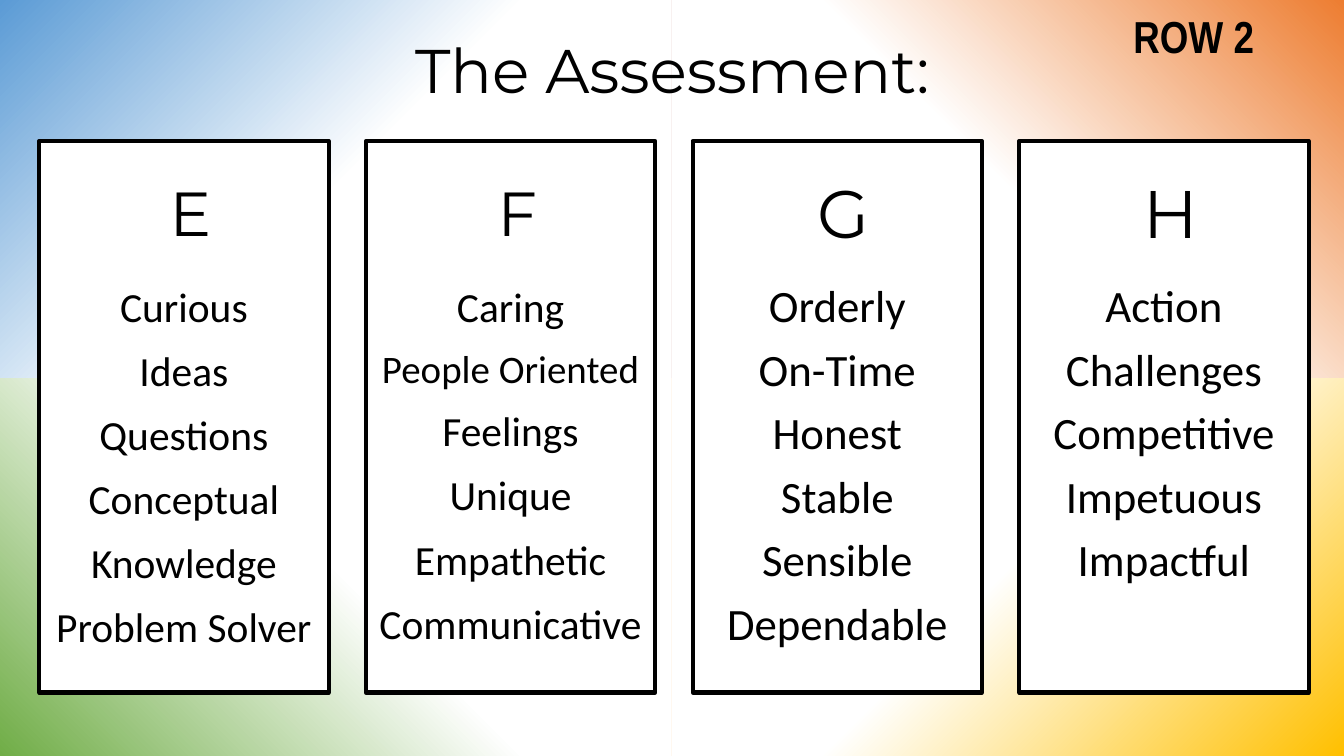
from pptx import Presentation
from pptx.dml.color import RGBColor
from pptx.enum.shapes import MSO_SHAPE
from pptx.enum.text import MSO_ANCHOR, PP_ALIGN
from pptx.util import Inches, Pt

RECTANGLE = MSO_SHAPE.RECTANGLE
TOP, MIDDLE = MSO_ANCHOR.TOP, MSO_ANCHOR.MIDDLE
CENTER = PP_ALIGN.CENTER

THEME = {
    "black": RGBColor.from_string("000000"),
    "white": RGBColor.from_string("FFFFFF"),
    "corners": ["5B9BD5", "ED7D31", "70AD47", "FFC000"],
    "heading": "Montserrat",
    "body": "Calibri",
    "label": "Arial Narrow",
    "title_size": 44,
    "label_size": 32,
}
# Two type scales for the cards: sizes, line spacings and top inset
COMPACT = {"letter": 44.4, "word": 29.6, "letter_gap": 0.9, "word_gap": 1.2, "inset": 0.41}
LARGE = {"letter": 48, "word": 32, "letter_gap": 0.8, "word_gap": 1.1, "inset": 0.45}
SMALLER_WORDS = {"People Oriented": 27.8}

CARDS = [
    ("E", COMPACT, ["Curious", "Ideas", "Questions", "Conceptual", "Knowledge", "Problem Solver"]),
    ("F", COMPACT, ["Caring", "People Oriented", "Feelings", "Unique", "Empathetic", "Communicative"]),
    ("G", LARGE, ["Orderly", "On-Time", "Honest", "Stable", "Sensible", "Dependable"]),
    ("H", LARGE, ["Action", "Challenges", "Competitive", "Impetuous", "Impactful"]),
]
CARD_LEFT, CARD_TOP, CARD_WIDTH, CARD_HEIGHT, CARD_STEP = 0.39, 1.4, 2.87, 5.47, 3.24


def write_line(para, text, font, size, spacing, before=0, after=0, bold=False):
    para.alignment = CENTER
    para.line_spacing = spacing
    para.space_before, para.space_after = Pt(before), Pt(after)
    span = para.add_run()
    span.text = text
    formats = {"name": font, "size": Pt(size), "bold": bold}
    for name, value in formats.items():
        setattr(span.font, name, value)
    span.font.color.rgb = THEME["black"]


# Deck and page
deck = Presentation()
deck.slide_width, deck.slide_height = Inches(13.33), Inches(7.5)
page = deck.slides.add_slide(deck.slide_layouts[6])
page.background.fill.solid()
page.background.fill.fore_color.rgb = THEME["black"]

# Four corner gradients, each fading towards the centre
half_width, half_height = deck.slide_width // 2, deck.slide_height // 2
angles = [315, 225, 45, 135]
for index, (color, angle) in enumerate(zip(THEME["corners"], angles)):
    row, column = divmod(index, 2)
    corner = page.shapes.add_shape(
        RECTANGLE, column * half_width, row * half_height, half_width, half_height)
    corner.shadow.inherit = False
    corner.line.fill.background()
    corner.fill.gradient()
    corner.fill.gradient_angle = angle
    start, end = corner.fill.gradient_stops
    start.color.rgb, start.position = RGBColor.from_string(color), 0
    end.color.rgb, end.position = THEME["white"], 0.5

# Title and row label
captions = [
    ("The Assessment:", (0.92, 0, 11.5, 1.45), THEME["heading"], THEME["title_size"], False),
    ("ROW 2", (10.35, 0, 2.98, 0.78), THEME["label"], THEME["label_size"], True),
]
for text, place, font, size, bold in captions:
    box = page.shapes.add_textbox(*[Inches(length) for length in place])
    box.text_frame.word_wrap = True
    box.text_frame.vertical_anchor = MIDDLE
    write_line(box.text_frame.paragraphs[0], text, font, size, 0.9, bold=bold)

# Cards: a letter above its words
for column, (letter, scale, words) in enumerate(CARDS):
    card = page.shapes.add_shape(
        RECTANGLE, Inches(CARD_LEFT + column * CARD_STEP), Inches(CARD_TOP),
        Inches(CARD_WIDTH), Inches(CARD_HEIGHT))
    card.shadow.inherit = False
    card.fill.solid()
    card.fill.fore_color.rgb = THEME["white"]
    card.line.color.rgb = THEME["black"]
    card.line.width = Pt(3)
    frame = card.text_frame
    frame.word_wrap = True
    frame.vertical_anchor = TOP
    frame.margin_top = Inches(scale["inset"])
    heading = frame.paragraphs[0]
    write_line(heading, letter, THEME["heading"], scale["letter"], scale["letter_gap"], after=12)
    heading._p.get_or_add_pPr().set("marL", str(Inches(0.13)))
    for word in words:
        size = SMALLER_WORDS.get(word, scale["word"])
        write_line(frame.add_paragraph(), word, THEME["body"], size, scale["word_gap"], before=3.2)

deck.save("out.pptx")
